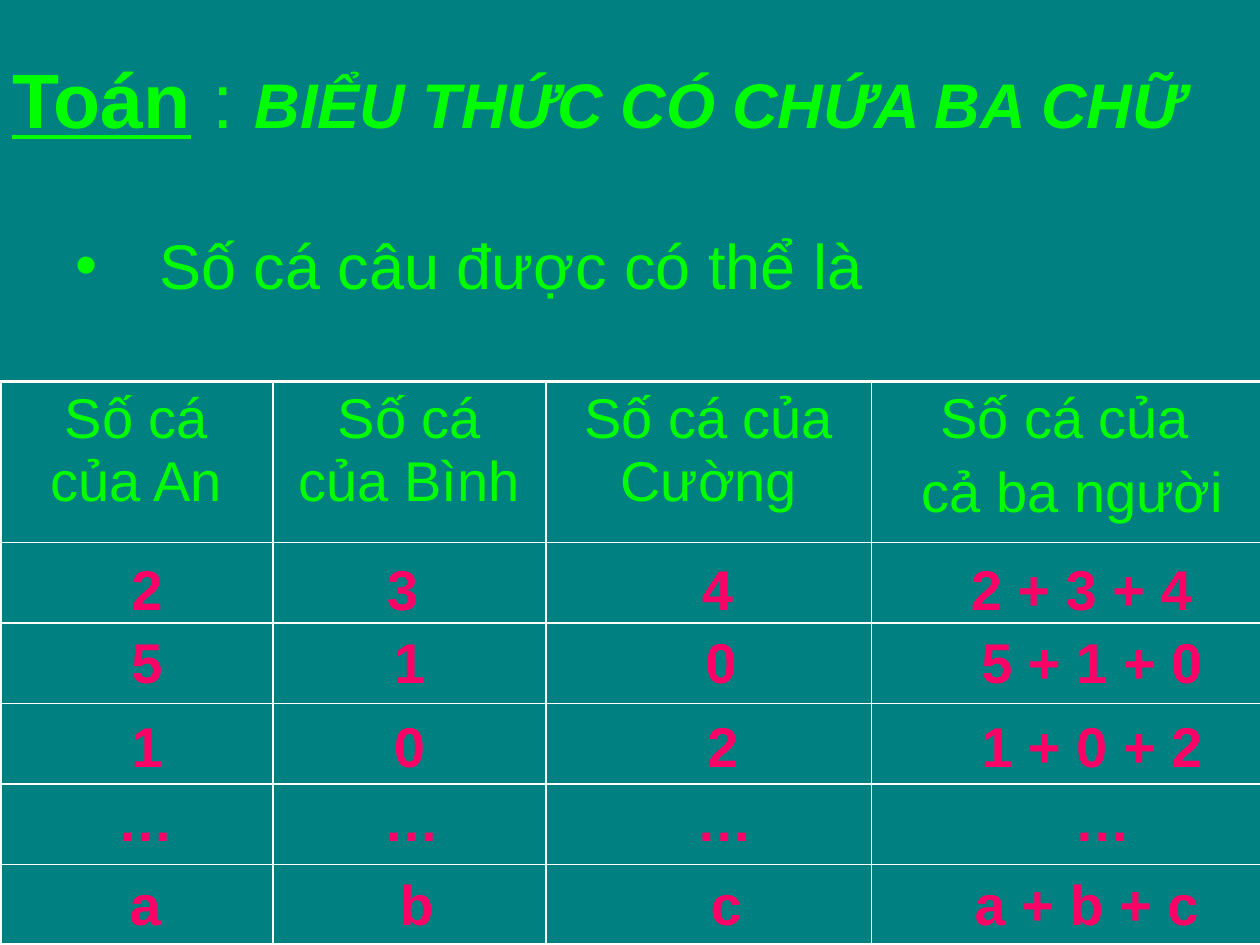
from lxml import etree
from pptx import Presentation
from pptx.dml.color import RGBColor
from pptx.enum import shapes, text
from pptx.oxml.ns import qn
from pptx.util import Pt

TEAL, GREEN, PINK, WHITE = "008080", "00FF00", "FF0066", "FFFFFF"
HEADERS = ["Số cá của An", "Số cá của Bình", "Số cá của Cường", "Số cá của \ncả ba người"]
COLUMN_WIDTHS = [156, 156, 186, 230]
HEADER_HEIGHT, ROW_HEIGHT, ROW_COUNT = 92, 46, 6
ANSWERS = [
    (100, [("2", 30), ("3", 176), ("4", 356), ("2 + 3 + 4", 564)]),
    (142, [("5", 30), ("1", 180), ("0", 358), ("5 + 1 + 0", 570)]),
    (190, [("1", 30), ("0", 180), ("2", 359), ("1 + 0 + 2", 570)]),
    (232, [("…", 29), ("…", 181), ("…", 360), ("…", 576)]),
    (280, [("a", 29), ("b", 184), ("c", 361), ("a + b + c", 567)]),
]


def color(value):
    return RGBColor.from_string(value)


def style(span, size, fill, bold=False):
    span.font.name = "Arial"
    span.font.size = Pt(size)
    span.font.bold = bold
    span.font.color.rgb = color(fill)


def add_text_box(page, left, top, width, height):
    box = page.shapes.add_textbox(Pt(left), Pt(top), Pt(width), Pt(height))
    box.text_frame.word_wrap = True
    return box.text_frame


def add_title(page, left, top, width, height):
    frame = add_text_box(page, left, top, width, height)
    frame.vertical_anchor = text.MSO_ANCHOR.MIDDLE
    parts = [("Toán", 44, True), (" : ", 44, False), ("BIỂU THỨC CÓ CHỨA BA CHỮ", 36, True)]
    for wording, size, bold in parts:
        span = frame.paragraphs[0].add_run()
        span.text = wording
        style(span, size, GREEN, bold)
    subject, _, topic = frame.paragraphs[0].runs
    subject.font.underline = True
    topic.font.italic = True


def add_statement(page, left, top, width, height):
    para = add_text_box(page, left, top, width, height).paragraphs[0]
    para.text = "Số cá câu được có thể là"
    para.space_before = Pt(7)
    style(para.runs[0], 36, GREEN)
    properties = para._p.get_or_add_pPr()
    properties.set("marL", str(Pt(48)))
    properties.set("indent", str(Pt(-48)))
    etree.SubElement(properties, qn("a:buFont")).set("typeface", "Arial")
    etree.SubElement(properties, qn("a:buChar")).set("char", "•")


def set_borders(cell, widths):
    properties = cell._tc.get_or_add_tcPr()
    for position, (side, width) in enumerate(widths.items()):
        line = etree.Element(qn(f"a:ln{side}"), w=str(Pt(width)))
        fill = etree.SubElement(line, qn("a:solidFill"))
        etree.SubElement(fill, qn("a:srgbClr")).set("val", WHITE)
        properties.insert(position, line)


def add_fish_table(page, left, top):
    column_count = len(COLUMN_WIDTHS)
    height = HEADER_HEIGHT + (ROW_COUNT - 1) * ROW_HEIGHT
    table = page.shapes.add_table(
        ROW_COUNT, column_count, Pt(left), Pt(top), Pt(sum(COLUMN_WIDTHS)), Pt(height)
    ).table
    table.first_row = False
    table.horz_banding = False
    for column, width in zip(table.columns, COLUMN_WIDTHS):
        column.width = Pt(width)
    for index, row in enumerate(table.rows):
        row.height = Pt(ROW_HEIGHT if index else HEADER_HEIGHT)
        for position, cell in enumerate(row.cells):
            cell.fill.background()
            edges = {
                "L": position == 0,
                "R": position == column_count - 1,
                "T": index == 0,
                "B": index == ROW_COUNT - 1,
            }
            set_borders(cell, {side: 2.25 if outer else 1 for side, outer in edges.items()})
    for cell, wording in zip(table.rows[0].cells, HEADERS):
        cell.text_frame.text = wording
        for para in cell.text_frame.paragraphs:
            para.alignment = text.PP_ALIGN.CENTER
            para.space_before = Pt(6.4)
            style(para.runs[0], 32, GREEN)


def add_answer(page, wording, left, top, width, height):
    box = page.shapes.add_shape(
        shapes.MSO_SHAPE.RECTANGLE, Pt(left), Pt(top), Pt(width), Pt(height)
    )
    box.shadow.inherit = False
    box.fill.solid()
    box.fill.fore_color.rgb = color(TEAL)
    box.line.color.rgb = color(TEAL)
    box.line.width = Pt(0.75)
    frame = box.text_frame
    frame.text = wording
    frame.word_wrap = False
    frame.vertical_anchor = text.MSO_ANCHOR.MIDDLE
    para = frame.paragraphs[0]
    para.alignment = text.PP_ALIGN.CENTER
    style(para.runs[0], 32, PINK, True)


def add_answers(page, left, top):
    for offset, row in ANSWERS:
        for wording, start in row:
            add_answer(page, wording, left + start, top + offset, 108, 36)


def main():
    deck = Presentation()
    deck.slide_width, deck.slide_height = Pt(720), Pt(540)
    page = deck.slides.add_slide(deck.slide_layouts[6])
    page.background.fill.solid()
    page.background.fill.fore_color.rgb = color(TEAL)
    add_title(page, 0, 0, 720, 112)
    add_statement(page, 36, 126, 684, 90)
    add_fish_table(page, 0, 218)
    add_answers(page, 0, 218)
    deck.save("out.pptx")


if __name__ == "__main__":
    main()
